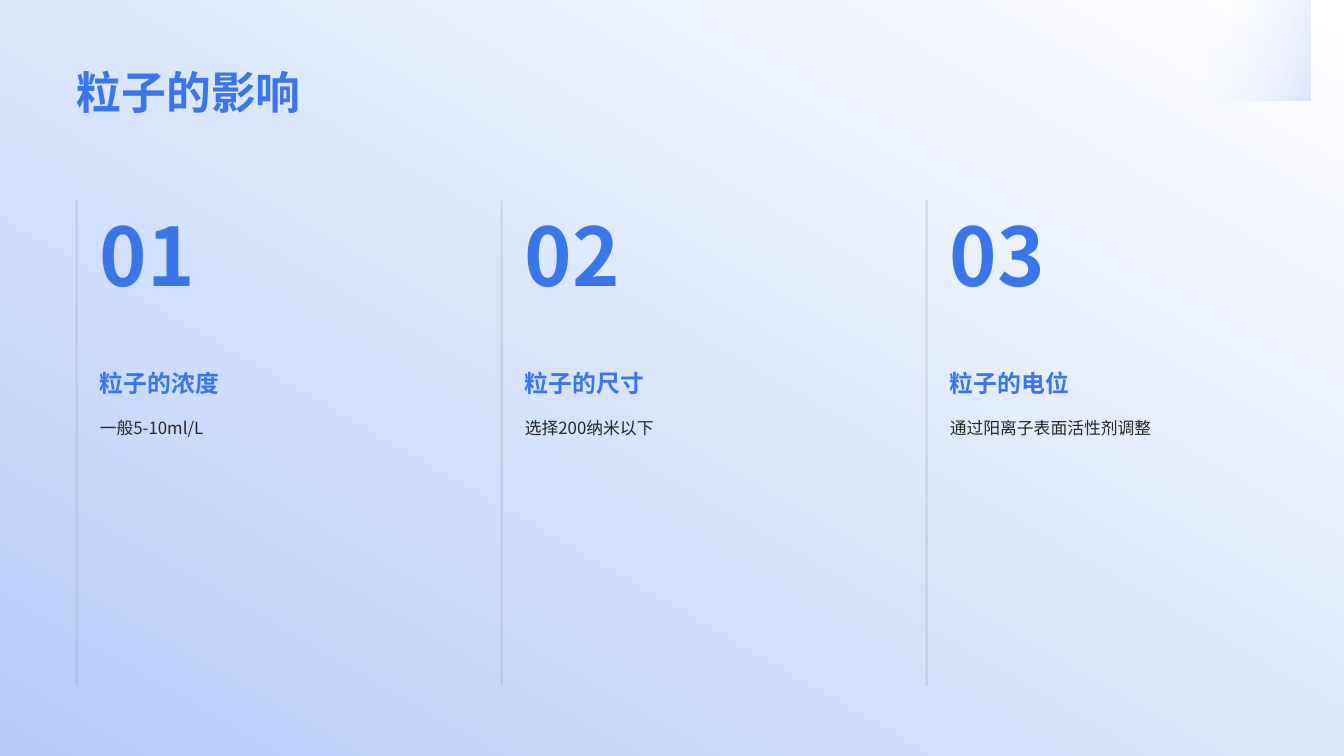
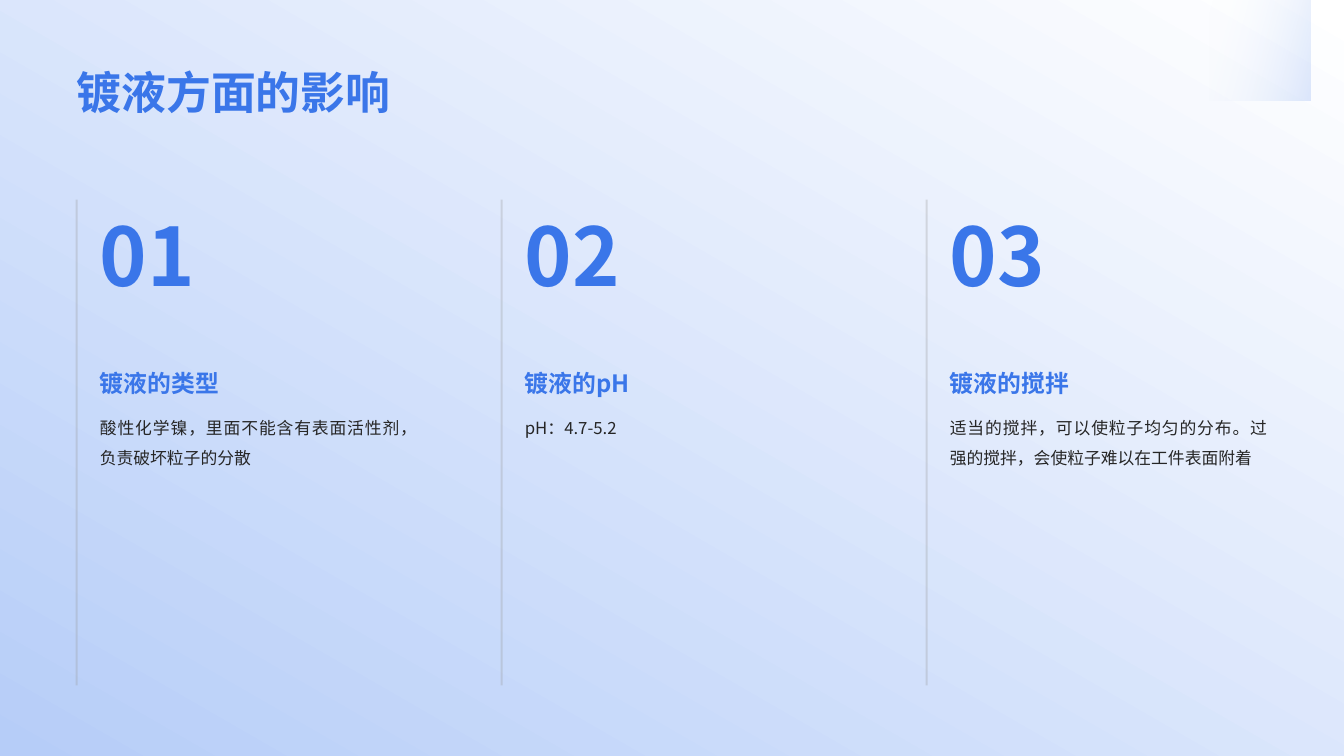
from math import asin, cos, pi, sin

from lxml.etree import SubElement
from pptx import Presentation
from pptx.dml.color import RGBColor
from pptx.enum.lang import MSO_LANGUAGE_ID
from pptx.enum.shapes import MSO_CONNECTOR
from pptx.enum.text import MSO_ANCHOR, MSO_AUTO_SIZE, PP_ALIGN
from pptx.oxml.ns import qn
from pptx.util import Inches, Pt

WIDE, HIGH = 13.33, 7.5
LEFT, SPAN = 0.76, 11.81
TOP, DEEP = 1.98, 4.82
PAD, TEXT = 0.23, 3.15
HUES = {"blue": "3A76E9", "sky": "B6CDF8", "white": "FFFFFF",
        "ink": "262626", "rule": "999999"}
FACE = "Noto Sans CJK SC"
STYLES = {
    "title": {"name": "Arial", "size": Pt(32), "bold": True, "hue": "blue",
              "anchor": MSO_ANCHOR.BOTTOM, "para": {"alignment": PP_ALIGN.LEFT}},
    "num": {"name": FACE, "size": Pt(57.6), "bold": True, "hue": "blue",
            "anchor": MSO_ANCHOR.MIDDLE, "para": {"alignment": PP_ALIGN.LEFT}},
    "head": {"name": FACE, "size": Pt(17), "bold": True, "hue": "blue",
             "anchor": MSO_ANCHOR.BOTTOM, "para": {"alignment": PP_ALIGN.LEFT}},
    "body": {"name": FACE, "size": Pt(12), "bold": False, "hue": "ink",
             "anchor": MSO_ANCHOR.TOP,
             "para": {"alignment": PP_ALIGN.JUSTIFY, "line_spacing": 1.5}},
}
SLIDES = [
    ("粒子的影响", [
        ("粒子的浓度", "一般5-10ml/L"),
        ("粒子的尺寸", "选择200纳米以下"),
        ("粒子的电位", "通过阳离子表面活性剂调整")]),
    ("镀液方面的影响", [
        ("镀液的类型", "酸性化学镍，里面不能含有表面活性剂，负责破坏粒子的分散"),
        ("镀液的pH", "pH：4.7-5.2"),
        ("镀液的搅拌", "适当的搅拌，可以使粒子均匀的分布。过强的搅拌，会使粒子难以在工件表面附着")]),
]


def color(name):
    """Return the named colour."""
    return RGBColor.from_string(HUES[name])


def fade(node, share):
    """Set the opacity, in percent, of each colour under a node."""
    for tint in node.iter(qn("a:srgbClr")):
        SubElement(tint, qn("a:alpha"), val=str(share * 1000))


def blend(fill, names, angle):
    """Fill with a two-colour linear gradient."""
    fill.gradient()
    fill.gradient_angle = angle
    for stop, name in zip(fill.gradient_stops, names):
        stop.color.rgb = color(name)


def write(shape, text, style):
    """Put styled text in a shape."""
    look = STYLES[style]
    frame = shape.text_frame
    traits = {"word_wrap": True, "auto_size": MSO_AUTO_SIZE.NONE,
              "vertical_anchor": look["anchor"], "margin_left": 0,
              "margin_right": 0, "margin_top": 0, "margin_bottom": 0}
    for key, value in traits.items():
        setattr(frame, key, value)
    para = frame.paragraphs[0]
    for key, value in look["para"].items():
        setattr(para, key, value)
    run = para.add_run()
    run.text = text
    font = run.font
    font.color.rgb = color(look["hue"])
    font.language_id = MSO_LANGUAGE_ID.SIMPLIFIED_CHINESE
    for key in ("name", "size", "bold"):
        setattr(font, key, look[key])
    SubElement(run.font._element, qn("a:ea"), typeface=FACE)


def label(slide, box, text, style):
    """Add a text box."""
    write(slide.shapes.add_textbox(*map(Inches, box)), text, style)


def disc(slide, layout, box):
    """Draw the corner disc, cut by the slide's top, on the layout."""
    x, y, size = box
    ray = size / 2
    mid = y + ray
    start = -asin(mid / ray)
    turn = pi - 2 * start
    dots = [(x + ray + ray * cos(start + turn * i / 90),
             mid + ray * sin(start + turn * i / 90)) for i in range(91)]
    pen = slide.shapes.build_freeform(*dots[0], scale=Inches(1))
    pen.add_line_segments(dots[1:], close=True)
    shape = pen.convert_to_shape()
    shape.shadow.inherit = False
    shape.line.fill.background()
    blend(shape.fill, ("blue", "white"), 165)
    for stop, share in zip(shape.element.iter(qn("a:gs")), (17, 0)):
        fade(stop, share)
    layout.shapes.element.insert(2, shape.element)


def rule(slide, x, y, tall):
    """Draw a faint upright line."""
    line = slide.shapes.add_connector(
        MSO_CONNECTOR.STRAIGHT, *map(Inches, (x, y, x, y + tall)))
    line.line.width = Pt(1.5)
    line.line.color.rgb = color("rule")
    fade(line.element, 30)
    SubElement(line.element.spPr, qn("a:effectLst"))


def card(slide, box, num, head, body):
    """Fill one column: rule, number, heading and body."""
    x, y, tall = box
    rule(slide, x, y, tall)
    x += PAD
    label(slide, (x, y, 1.45, 1.08), f"{num:02}", "num")
    label(slide, (x, y + 1.31, TEXT, 0.65), head, "head")
    label(slide, (x, y + 2.06, TEXT, 0.96), body, "body")


def page(deck, layout, title, cards):
    """Add a slide with a title and equal columns."""
    slide = deck.slides.add_slide(layout)
    write(slide.shapes.title, title, "title")
    step = (SPAN - PAD - TEXT) / (len(cards) - 1)
    for i, (head, body) in enumerate(cards):
        card(slide, (LEFT + i * step, TOP, DEEP), i + 1, head, body)
    return slide


def main():
    """Build and save the deck."""
    deck = Presentation()
    deck.slide_width, deck.slide_height = Inches(WIDE), Inches(HIGH)
    layout = deck.slide_layouts.get_by_name("Title Only")
    blend(deck.slide_master.background.fill, ("sky", "white"), 60)
    area = {"left": LEFT, "top": 0.39, "width": SPAN, "height": 0.79}
    for key, value in area.items():
        setattr(layout.placeholders[0], key, Inches(value))
    pages = [page(deck, layout, *data) for data in SLIDES]
    disc(pages[0], layout, (11.7, -0.72, 1.63))
    deck.save("out.pptx")


if __name__ == "__main__":
    main()
